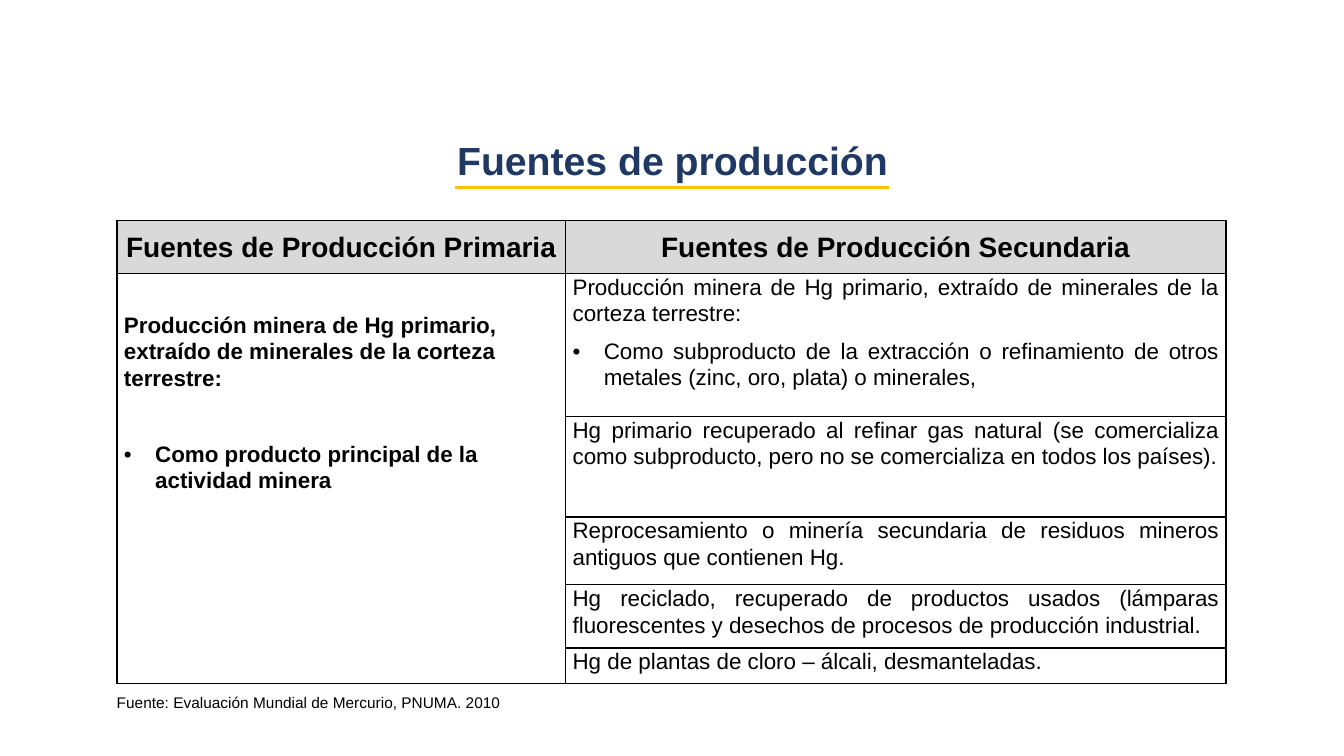
"""Build the slide on primary and secondary mercury production sources."""
from lxml.etree import SubElement
from pptx import Presentation
from pptx.dml.color import RGBColor
from pptx.enum.shapes import MSO_CONNECTOR
from pptx.enum.text import MSO_ANCHOR, PP_ALIGN
from pptx.oxml.ns import qn
from pptx.util import Inches, Pt

TITLE = "Fuentes de producción"
SOURCE = "Fuente: Evaluación Mundial de Mercurio, PNUMA. 2010"
HEADERS = ["Fuentes de Producción Primaria", "Fuentes de Producción Secundaria"]
ORIGIN = "Producción minera de Hg primario, extraído de minerales de la corteza terrestre:"
PRIMARY = [ORIGIN, "Como producto principal de la actividad minera"]
SECONDARY = [
    [ORIGIN, "Como subproducto de la extracción o refinamiento de otros metales (zinc, oro, plata) o minerales,"],
    ["Hg primario recuperado al refinar gas natural (se comercializa como subproducto, pero no se comercializa en todos los países)."],
    ["Reprocesamiento o minería secundaria de residuos mineros antiguos que contienen Hg."],
    ["Hg reciclado, recuperado de productos usados (lámparas fluorescentes y desechos de procesos de producción industrial."],
    ["Hg de plantas de cloro – álcali, desmanteladas."],
]
COLUMNS = [4.45, 6.55]
ROWS = [0.52, 1.42, 1, 0.67, 0.63, 0.35]
TABLE_LEFT, TABLE_TOP = 1.16, 2.19
UNDERLINE = (4.51, 8.82, 1.86)
BLACK, NAVY, GOLD, GRAY = "000000", "1F3864", "FFC000", "D9D9D9"


def color(value):
    return RGBColor.from_string(value)


def write(para, text, size, tint=BLACK, bold=False, align=PP_ALIGN.LEFT, spacing=1.0):
    para.alignment = align
    para.line_spacing = spacing
    span = para.add_run()
    span.text = text
    span.font.name = "Arial"
    span.font.size = Pt(size)
    span.font.bold = bold
    span.font.color.rgb = color(tint)


def add_bullet(para):
    properties = para._p.get_or_add_pPr()
    properties.set("marL", str(Inches(0.31)))
    properties.set("indent", str(-Inches(0.31)))
    tint = SubElement(properties, qn("a:buClr"))
    SubElement(tint, qn("a:srgbClr"), val=BLACK)
    SubElement(properties, qn("a:buFont"), typeface="Arial")
    SubElement(properties, qn("a:buChar"), char="•")


def add_text(page, place, text, size, **style):
    box = page.shapes.add_textbox(*[Inches(length) for length in place])
    box.text_frame.word_wrap = True
    box.text_frame.vertical_anchor = MSO_ANCHOR.MIDDLE
    write(box.text_frame.paragraphs[0], text, size, **style)


def prepare_cell(cell, fill=None):
    properties = cell._tc.get_or_add_tcPr()
    for side in ("lnL", "lnR", "lnT", "lnB"):
        border = SubElement(properties, qn(f"a:{side}"), w=str(Pt(1)))
        SubElement(SubElement(border, qn("a:solidFill")), qn("a:srgbClr"), val=BLACK)
    if fill:
        cell.fill.solid()
        cell.fill.fore_color.rgb = color(fill)
    else:
        cell.fill.background()
    cell.margin_left = cell.margin_right = Inches(0.07)
    cell.margin_top = cell.margin_bottom = 0


def fill_cell(cell, texts, gap=8, **style):
    for index, text in enumerate(texts):
        frame = cell.text_frame
        para = frame.add_paragraph() if index else frame.paragraphs[0]
        if index:
            add_bullet(para)
            para.space_before = Pt(gap)
        write(para, text, 16, spacing=1.07, **style)


def add_sources_table(page):
    table = page.shapes.add_table(
        len(ROWS), len(COLUMNS), Inches(TABLE_LEFT), Inches(TABLE_TOP),
        Inches(sum(COLUMNS)), Inches(sum(ROWS))).table
    table.first_row = table.horz_banding = False
    for column, width in zip(table.columns, COLUMNS):
        column.width = Inches(width)
    for index, height in enumerate(ROWS):
        table.rows[index].height = Inches(height)
        for cell in table.rows[index].cells:
            prepare_cell(cell, None if index else GRAY)
    for cell, header in zip(table.rows[0].cells, HEADERS):
        cell.vertical_anchor = MSO_ANCHOR.MIDDLE
        write(cell.text_frame.paragraphs[0], header, 20, bold=True,
              align=PP_ALIGN.CENTER, spacing=1.07)
    primary = table.cell(1, 0)
    primary.merge(table.cell(len(ROWS) - 1, 0))
    primary.margin_top = Inches(0.38)
    fill_cell(primary, PRIMARY, gap=35, bold=True)
    for row, texts in enumerate(SECONDARY, start=1):
        fill_cell(table.cell(row, 1), texts, align=PP_ALIGN.JUSTIFY)


def add_underline(page):
    left, right, level = [Inches(length) for length in UNDERLINE]
    line = page.shapes.add_connector(MSO_CONNECTOR.STRAIGHT, left, level, right, level)
    line.line.color.rgb = color(GOLD)
    line.line.width = Pt(2.25)
    SubElement(line._element.spPr, qn("a:effectLst"))


def main():
    deck = Presentation()
    deck.slide_width, deck.slide_height = Inches(13.33), Inches(7.5)
    page = deck.slides.add_slide(deck.slide_layouts[6])
    add_text(page, (0.92, 0.86, 11.5, 1.51), TITLE, 28, tint=NAVY, bold=True,
             align=PP_ALIGN.CENTER, spacing=0.9)
    add_text(page, (1.06, 6.82, 4.47, 0.29), SOURCE, 11)
    add_sources_table(page)
    add_underline(page)
    deck.save("out.pptx")


if __name__ == "__main__":
    main()
